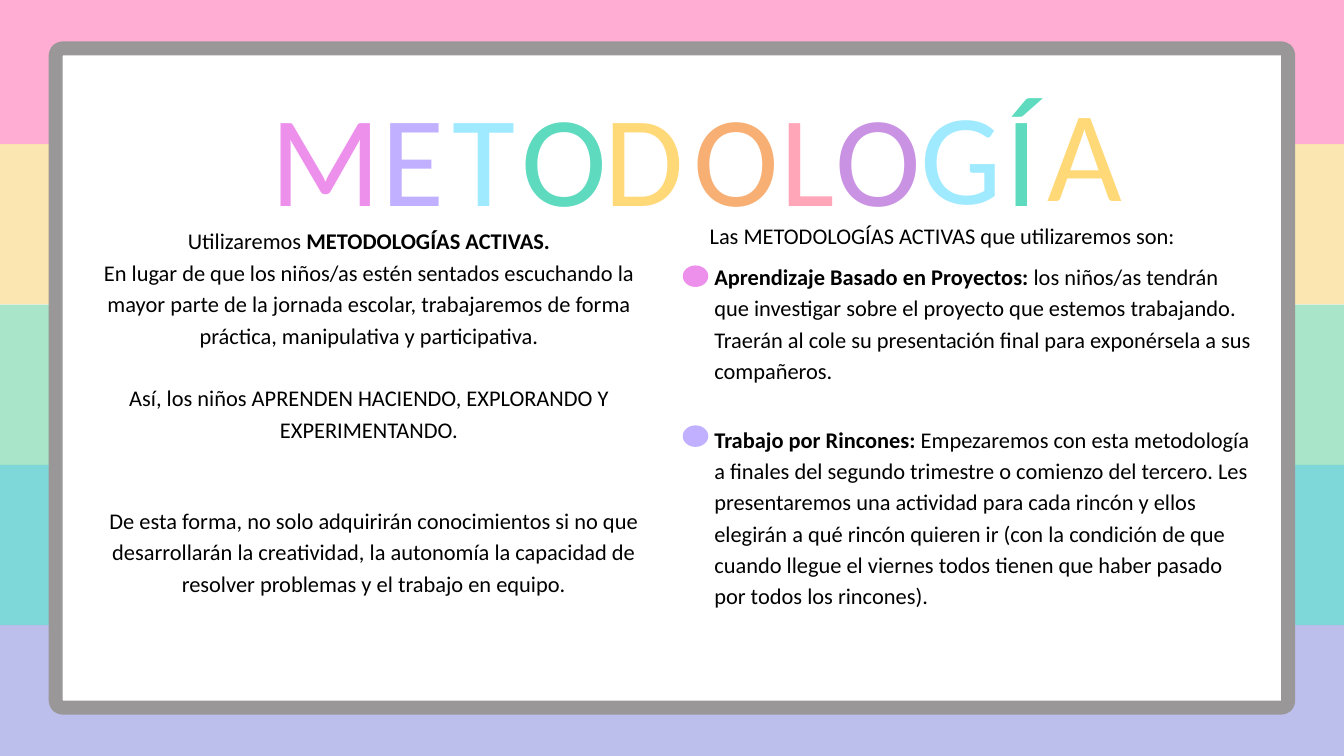
from lxml.etree import SubElement
from pptx import Presentation
from pptx.dml.color import RGBColor
from pptx.enum.shapes import MSO_SHAPE as Shape
from pptx.enum.text import MSO_ANCHOR as Anchor, MSO_AUTO_SIZE as AutoSize, PP_ALIGN as Align
from pptx.oxml.ns import qn
from pptx.util import Inches, Pt

# The page is a grid of 20 columns by 11.25 rows
COLUMNS, ROWS = 20, 11.25
CELL = Inches(1)
FONT = "Calibri"
COLOURS = {
    "pink stripe": "FF8BC0", "yellow stripe": "FADA8F", "green stripe": "85DAB1",
    "teal stripe": "48C8CB", "blue stripe": "A0A4E3",
    "white": "FFFFFF", "frame": "999797", "text": "000000",
    "pink": "ED90EC", "lilac": "C1AFFF", "sky": "9FEAFF", "mint": "5EDABF",
    "yellow": "FFD978", "orange": "F8AF74", "rose": "FFA6B9", "purple": "C992E3",
}
STRIPES = ["pink stripe", "yellow stripe", "green stripe", "teal stripe", "blue stripe"]

# Letter, left and top within the title box, width, colour
LETTERS = [
    ("M", 0, 0.08, 1.12, "pink"), ("E", 1.46, 0.08, 1.3, "lilac"),
    ("T", 2.47, 0.08, 1.41, "sky"), ("O", 3.72, 0.08, 1.3, "mint"),
    ("D", 4.97, 0.08, 1.16, "yellow"), ("O", 6.29, 0.08, 1.16, "orange"),
    ("L", 7.41, 0.08, 1.16, "rose"), ("O", 8.41, 0.08, 1.16, "purple"),
    ("G", 9.57, 0.04, 1.41, "sky"), ("Í", 10.53, 0.08, 1.3, "mint"),
    ("A", 11.54, 0, 1.16, "yellow"),
]

# Bold passages stand between double asterisks
INTRO = [
    "Utilizaremos **METODOLOGÍAS ACTIVAS.**",
    "En lugar de que los niños/as estén sentados escuchando la mayor parte de la jornada "
    "escolar, trabajaremos de forma práctica, manipulativa y participativa.",
    "Así, los niños APRENDEN HACIENDO, EXPLORANDO Y EXPERIMENTANDO.",
]
CLOSING = [
    "De esta forma, no solo adquirirán conocimientos si no que desarrollarán la creatividad, "
    "la autonomía la capacidad de resolver problemas y el trabajo en equipo.",
]
HEADING = ["Las METODOLOGÍAS ACTIVAS que utilizaremos son:"]
PROJECTS = [
    "**Aprendizaje Basado en Proyectos:** los niños/as tendrán que investigar sobre el "
    "proyecto que estemos trabajando. Traerán al cole su presentación final para "
    "exponérsela a sus compañeros.",
]
CORNERS = [
    "**Trabajo por Rincones:** Empezaremos con esta metodología a finales del segundo "
    "trimestre o comienzo del tercero. Les presentaremos una actividad para cada rincón y "
    "ellos elegirán a qué rincón quieren ir (con la condición de que cuando llegue el "
    "viernes todos tienen que haber pasado por todos los rincones).",
]


def colour(name):
    return RGBColor.from_string(COLOURS[name])


def cells(box):
    return [round(length * CELL) for length in box]


def add_filled(page, preset, box, fill):
    shape = page.shapes.add_shape(preset, *cells(box))
    shape.shadow.inherit = False
    shape.fill.solid()
    shape.fill.fore_color.rgb = colour(fill)
    shape.line.fill.background()
    return shape


def prepare_frame(frame):
    frame.margin_left = frame.margin_top = frame.margin_right = frame.margin_bottom = 0
    frame.word_wrap = True
    frame.auto_size = AutoSize.NONE
    frame.vertical_anchor = Anchor.TOP


def format_span(span, size, name, bold=False):
    span.font.name, span.font.size, span.font.bold = FONT, Pt(size), bold
    span.font.color.rgb = colour(name)


def draw_stripes(page, box):
    left, top, width, height = box
    step = height / len(STRIPES)
    for index, name in enumerate(STRIPES):
        stripe = add_filled(page, Shape.RECTANGLE, (left, top + index * step, width, step), name)
        tint = stripe.fill._xPr.find(qn("a:solidFill"))[0]
        SubElement(tint, qn("a:alpha"), val="70000")


def draw_board(page, box):
    board = add_filled(page, Shape.ROUNDED_RECTANGLE, box, "white")
    board.adjustments[0] = 0.01
    board.line.color.rgb = colour("frame")
    board.line.width = Pt(15)


def draw_title(page, box):
    left, top, _, height = box
    for letter, across, down, width, name in LETTERS:
        text_box = page.shapes.add_textbox(*cells((left + across, top + down, width, height)))
        prepare_frame(text_box.text_frame)
        para = text_box.text_frame.paragraphs[0]
        para.text = letter
        para.alignment = Align.CENTER
        para.line_spacing = Pt(193.8)
        format_span(para.runs[0], 138.4, name)


def fill_text(page, index, box, texts, align=Align.CENTER, gap_before=None):
    """Move a placeholder to the box; a whole line is left free before paragraph gap_before."""
    holder = page.placeholders[index]
    holder.left, holder.top, holder.width, holder.height = cells(box)
    page.shapes._spTree.append(holder._element)  # in front of the board
    frame = holder.text_frame
    prepare_frame(frame)
    for number, text in enumerate(texts):
        para = frame.add_paragraph() if number else frame.paragraphs[0]
        para.alignment = align
        para.line_spacing = Pt(33.6)
        para.space_before = Pt(33.6 if number == gap_before else 0)
        para.space_after = Pt(0)
        properties = para._p.get_or_add_pPr()
        properties.set("marL", "0")
        properties.set("indent", "0")
        SubElement(properties, qn("a:buNone"))
        for part, words in enumerate(text.split("**")):
            if words:
                span = para.add_run()
                span.text = words
                format_span(span, 24, "text", bold=part % 2 == 1)


def draw_method(page, index, box, texts, dot, drop):
    """Place one method with its round marker, drop rows below the top of the box."""
    left, top, _, _ = box
    add_filled(page, Shape.OVAL, (left - 0.47, top + drop, 0.38, 0.32), dot)
    fill_text(page, index, box, texts, Align.LEFT)


def main():
    deck = Presentation()
    deck.slide_width, deck.slide_height = cells((COLUMNS, ROWS))
    page = deck.slides.add_slide(deck.slide_layouts.get_by_name("Comparison"))

    # Background and title
    draw_stripes(page, (-1.05, -0.24, 22.1, 11.93))
    draw_board(page, (0.83, 0.72, 18.34, 9.81))
    draw_title(page, (4.03, 0.69, 12.7, 2.61))

    # Left column
    fill_text(page, 1, (1.47, 3.32, 8.04, 3.67), INTRO, gap_before=2)
    fill_text(page, 2, (1.54, 7.48, 8.04, 1.83), CLOSING)

    # Right column
    fill_text(page, 0, (10, 3.24, 8.04, 0.45), HEADING)
    draw_method(page, 3, (10.63, 3.85, 8.04, 1.85), PROJECTS, "pink", 0.1)
    draw_method(page, 4, (10.63, 6.27, 8.04, 3.23), CORNERS, "lilac", 0.06)

    deck.save("out.pptx")


if __name__ == "__main__":
    main()
